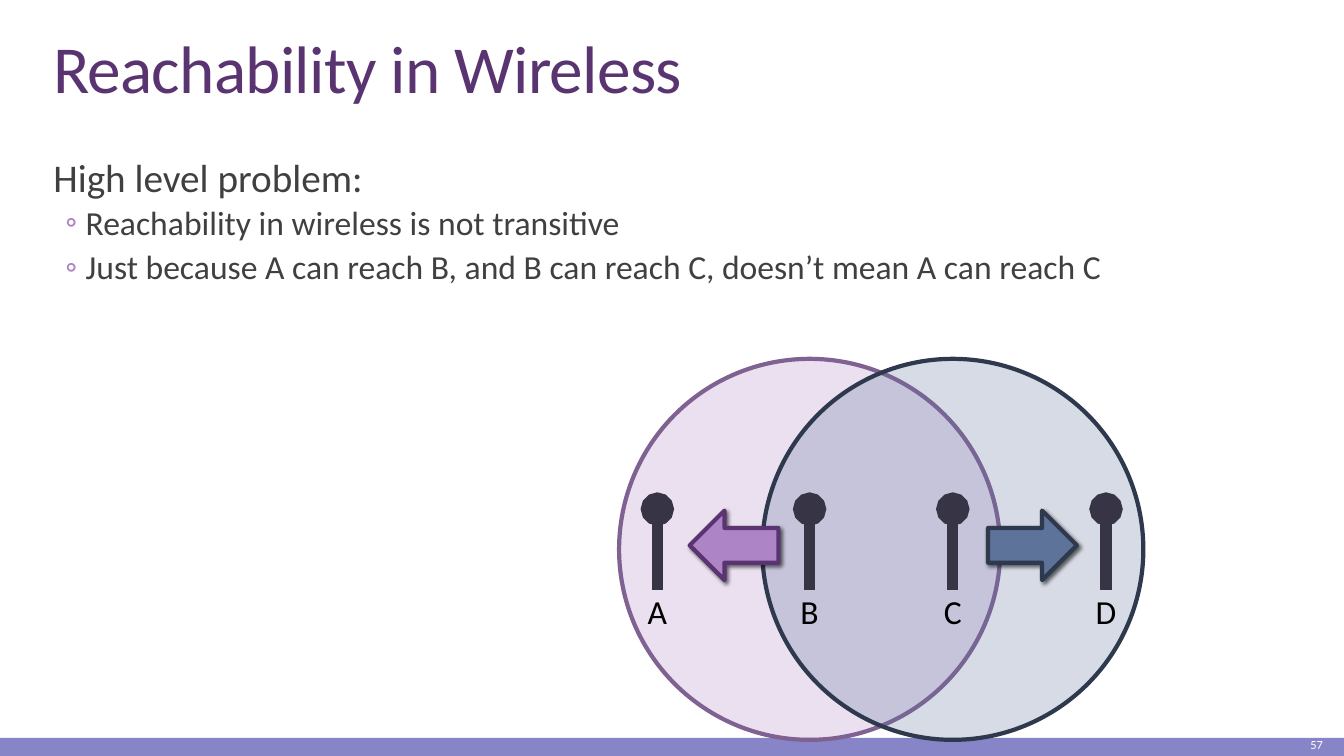
from lxml import etree
from pptx import Presentation
from pptx.dml.color import RGBColor
from pptx.enum.shapes import MSO_CONNECTOR, MSO_SHAPE
from pptx.enum.text import MSO_ANCHOR, PP_ALIGN
from pptx.oxml import parse_xml
from pptx.oxml.ns import nsdecls, qn
from pptx.util import Inches, Pt

OVAL, RECTANGLE, UP_ARROW = MSO_SHAPE.OVAL, MSO_SHAPE.RECTANGLE, MSO_SHAPE.UP_ARROW
STRAIGHT = MSO_CONNECTOR.STRAIGHT
LEFT, CENTER, RIGHT = PP_ALIGN.LEFT, PP_ALIGN.CENTER, PP_ALIGN.RIGHT
TOP, MIDDLE, BOTTOM = MSO_ANCHOR.TOP, MSO_ANCHOR.MIDDLE, MSO_ANCHOR.BOTTOM

TITLE = "Reachability in Wireless"
PROBLEM = "High level problem:"
POINTS = [
    "Reachability in wireless is not transitive",
    "Just because A can reach B, and B can reach C, doesn’t mean A can reach C",
]
PAGE = "57"
STATIONS = {"A": 6.52, "B": 8.03, "C": 9.45, "D": 10.97}
RANGES = [("B", "AD84C6", "806292"), ("C", "5D739A", "2E394D")]
SIGNALS = [(7.28, 270, "AD84C6", "5A3471"), (10.24, 90, "5D739A", "2E394D")]

THEME = {
    "font": "Calibri", "title": "5A3471", "body": "404040", "bullet": "AD84C6",
    "bar": "8784C7", "page": "FFFFFF", "antenna": "373545", "label": "000000",
    "title_size": 48, "problem_size": 28, "text_size": 24, "page_size": 8.9,
}
SLIDE_W, SLIDE_H = 13.33, 7.5
MARGIN, CONTENT_W = 0.43, 12.64
BAR_TOP = 7.32
RANGE_SIZE, RANGE_TOP = 3.78, 3.56
ARROW_W, ARROW_H, ARROW_Y = 0.69, 0.88, 5.41
ANTENNA_TOP, ANTENNA_BOTTOM = 5.05, 5.85
LABEL_W, LABEL_H, LABEL_TOP = 0.41, 0.5, 5.81

prs = Presentation()
prs.slide_width, prs.slide_height = Inches(SLIDE_W), Inches(SLIDE_H)
slide = prs.slides.add_slide(prs.slide_layouts[6])


def rgb(value):
    return RGBColor.from_string(value)


def add_shape(kind, x, y, w, h, fill, line=None, alpha=None):
    shape = slide.shapes.add_shape(kind, Inches(x), Inches(y), Inches(w), Inches(h))
    shape.shadow.inherit = False
    shape.fill.solid()
    shape.fill.fore_color.rgb = rgb(fill)
    if alpha:
        color = shape.fill._xPr.find(qn("a:solidFill"))[0]
        etree.SubElement(color, qn("a:alpha")).set("val", str(alpha * 1000))
    if line:
        shape.line.color.rgb = rgb(line)
        shape.line.width = Pt(3)
    else:
        shape.line.fill.background()
    return shape


def add_frame(x, y, w, h, anchor=TOP, wrap=True, side=0.1):
    frame = slide.shapes.add_textbox(Inches(x), Inches(y), Inches(w), Inches(h)).text_frame
    frame.word_wrap = wrap
    frame.vertical_anchor = anchor
    frame.margin_left = frame.margin_right = Inches(side)
    return frame


def write(paragraph, text, size, color, align=LEFT, line=1.0, before=0, after=0,
          margin=0, hang=0, bullet=None, spacing=None):
    props = paragraph._p.get_or_add_pPr()
    props.set("marL", str(Inches(margin)))
    props.set("indent", str(-Inches(hang)))
    if bullet:
        bullet_color = etree.SubElement(props, qn("a:buClr"))
        etree.SubElement(bullet_color, qn("a:srgbClr")).set("val", THEME["bullet"])
        etree.SubElement(props, qn("a:buFont")).set("typeface", THEME["font"])
        etree.SubElement(props, qn("a:buChar")).set("char", bullet)
    paragraph.alignment = align
    paragraph.line_spacing = line
    paragraph.space_before, paragraph.space_after = Pt(before), Pt(after)
    run = paragraph.add_run()
    run.text = text
    run.font.name, run.font.size = THEME["font"], Pt(size)
    run.font.color.rgb = rgb(color)
    if spacing:
        run.font._element.set("spc", str(int(spacing * 100)))


def add_header():
    add_shape(RECTANGLE, 0, BAR_TOP, SLIDE_W, SLIDE_H - BAR_TOP, THEME["bar"])
    title = add_frame(MARGIN, 0.31, CONTENT_W, 0.8, BOTTOM)
    write(title.paragraphs[0], TITLE, THEME["title_size"], THEME["title"],
          line=0.85, spacing=-0.5)
    page = add_frame(11.79, 7.28, 1.43, 0.22, MIDDLE)
    write(page.paragraphs[0], PAGE, THEME["page_size"], THEME["page"], align=RIGHT)


def add_body():
    body = add_frame(MARGIN, 1.52, CONTENT_W, 5.24, side=0)
    write(body.paragraphs[0], PROBLEM, THEME["problem_size"], THEME["body"],
          line=0.9, after=2, margin=0.1)
    for point in POINTS:
        write(body.add_paragraph(), point, THEME["text_size"], THEME["body"],
              line=0.9, before=2, after=4, margin=0.42, hang=0.2, bullet="◦")


def add_signal(x, rotation, fill, line):
    arrow = add_shape(UP_ARROW, x - ARROW_W / 2, ARROW_Y - ARROW_H / 2,
                      ARROW_W, ARROW_H, fill, line)
    arrow.rotation = rotation
    effects = arrow._element.spPr.find(qn("a:effectLst"))
    effects.append(parse_xml(
        f'<a:outerShdw {nsdecls("a")} blurRad="{Pt(3)}" dist="{Pt(2)}" dir="2700000" '
        'rotWithShape="0"><a:srgbClr val="000000"><a:alpha val="60000"/></a:srgbClr>'
        '</a:outerShdw>'))


def add_station(name, x):
    antenna = slide.shapes.add_connector(
        STRAIGHT, Inches(x), Inches(ANTENNA_TOP), Inches(x), Inches(ANTENNA_BOTTOM))
    antenna.line.color.rgb = rgb(THEME["antenna"])
    antenna.line.width = Pt(8)
    etree.SubElement(antenna.line._get_or_add_ln(), qn("a:headEnd")).set("type", "oval")
    etree.SubElement(antenna._element.spPr, qn("a:effectLst"))
    label = add_frame(x - LABEL_W / 2, LABEL_TOP, LABEL_W, LABEL_H, wrap=False)
    write(label.paragraphs[0], name, THEME["text_size"], THEME["label"], align=CENTER)


add_header()
add_body()
for station, fill, line in RANGES:
    add_shape(OVAL, STATIONS[station] - RANGE_SIZE / 2, RANGE_TOP,
              RANGE_SIZE, RANGE_SIZE, fill, line, alpha=25)
for signal in SIGNALS:
    add_signal(*signal)
for name, x in STATIONS.items():
    add_station(name, x)
prs.save("out.pptx")
